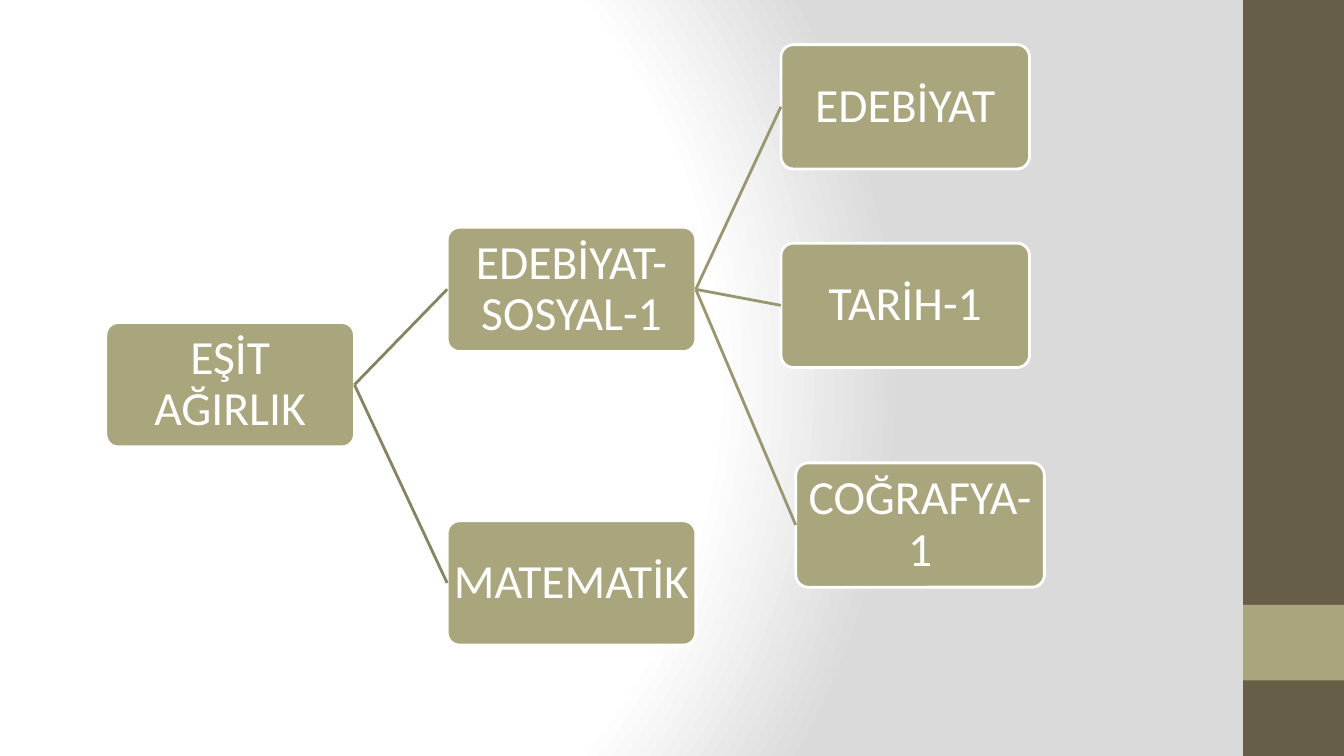
from pptx import Presentation
from pptx import util as u
from pptx.dml.color import RGBColor
from pptx.enum import shapes, text
from pptx.oxml import parse_xml
from pptx.oxml.ns import nsdecls

Pt = u.Pt
WIDE, HIGH = 960, 540
BOX_W, BOX_H = 177.6, 88.8
WHITE, SAND, DARK = "FFFFFF", "A9A57C", "675E47"
TREE = [
    ("EŞİT AĞIRLIK", 75.6, 230.4, None, None),
    ("EDEBİYAT-SOSYAL-1", 319.4, 162.3, "EŞİT AĞIRLIK", "878463"),
    ("EDEBİYAT", 557.8, 31.9, "EDEBİYAT-SOSYAL-1", "999671"),
    ("TARİH-1", 557.8, 173.7, "EDEBİYAT-SOSYAL-1", "999671"),
    ("COĞRAFYA-1", 568.4, 330.6, "EDEBİYAT-SOSYAL-1", "999671"),
    ("MATEMATİK", 319.4, 372, "EŞİT AĞIRLIK", "878463"),
]


def paint(fmt, color):
    fmt.solid()
    fmt.fore_color.rgb = RGBColor.from_string(color)


def backdrop(slide):
    slide.background.fill.gradient()
    grad = slide.element.xpath(".//p:bg//a:gradFill")[0]
    stops = "".join(
        f'<a:gs pos="{pos}000"><a:srgbClr val="{color}"/></a:gs>'
        for pos, color in [(0, WHITE), (75, WHITE), (100, "DADADA")])
    grad.getparent().replace(grad, parse_xml(
        f'<a:gradFill {nsdecls("a")} rotWithShape="1"><a:gsLst>{stops}</a:gsLst>'
        '<a:path path="circle"><a:fillToRect l="20000" t="50000" '
        'r="100000" b="50000"/></a:path></a:gradFill>'))


def block(slide, kind, left, top, width, height, color):
    shape = slide.shapes.add_shape(
        kind, Pt(left), Pt(top), Pt(width), Pt(height))
    shape.shadow.inherit = False
    paint(shape.fill, color)
    shape.line.fill.background()
    return shape


def band(slide, top, height, color):
    block(slide, shapes.MSO_SHAPE.RECTANGLE, WIDE - 72, top, 72, height, color)


def node(slide, label, left, top):
    box = block(slide, shapes.MSO_SHAPE.ROUNDED_RECTANGLE,
                left, top, BOX_W, BOX_H, SAND)
    box.adjustments[0] = 0.1
    paint(box.line.fill, WHITE)
    box.line.width = Pt(2)
    frame = box.text_frame
    frame.word_wrap = True
    frame.vertical_anchor = text.MSO_ANCHOR.MIDDLE
    frame.margin_left = frame.margin_right = Pt(1.5)
    frame.margin_top = frame.margin_bottom = Pt(1.5)
    para = frame.paragraphs[0]
    para.text = label
    para.alignment = text.PP_ALIGN.CENTER
    para.line_spacing = 0.9
    para.font.name = "Calibri"
    para.font.size = Pt(34)
    paint(para.font.fill, WHITE)
    return box


def link(slide, start, end, color):
    line = slide.shapes.add_connector(shapes.MSO_CONNECTOR.STRAIGHT, 0, 0, 0, 0)
    line.begin_connect(start, 3)
    line.end_connect(end, 1)
    paint(line.line.fill, color)
    line.line.width = Pt(2)
    line.element.spPr.append(parse_xml(f'<a:effectLst {nsdecls("a")}/>'))


def main():
    deck = Presentation()
    deck.slide_width, deck.slide_height = Pt(WIDE), Pt(HIGH)
    slide = deck.slides.add_slide(deck.slide_layouts[6])
    backdrop(slide)
    band(slide, 0, HIGH, DARK)
    band(slide, 432, 54, SAND)
    nodes = {}
    for label, left, top, root, color in TREE:
        nodes[label] = node(slide, label, left, top)
        if root:
            link(slide, nodes[root], nodes[label], color)
    deck.save("out.pptx")


if __name__ == "__main__":
    main()
